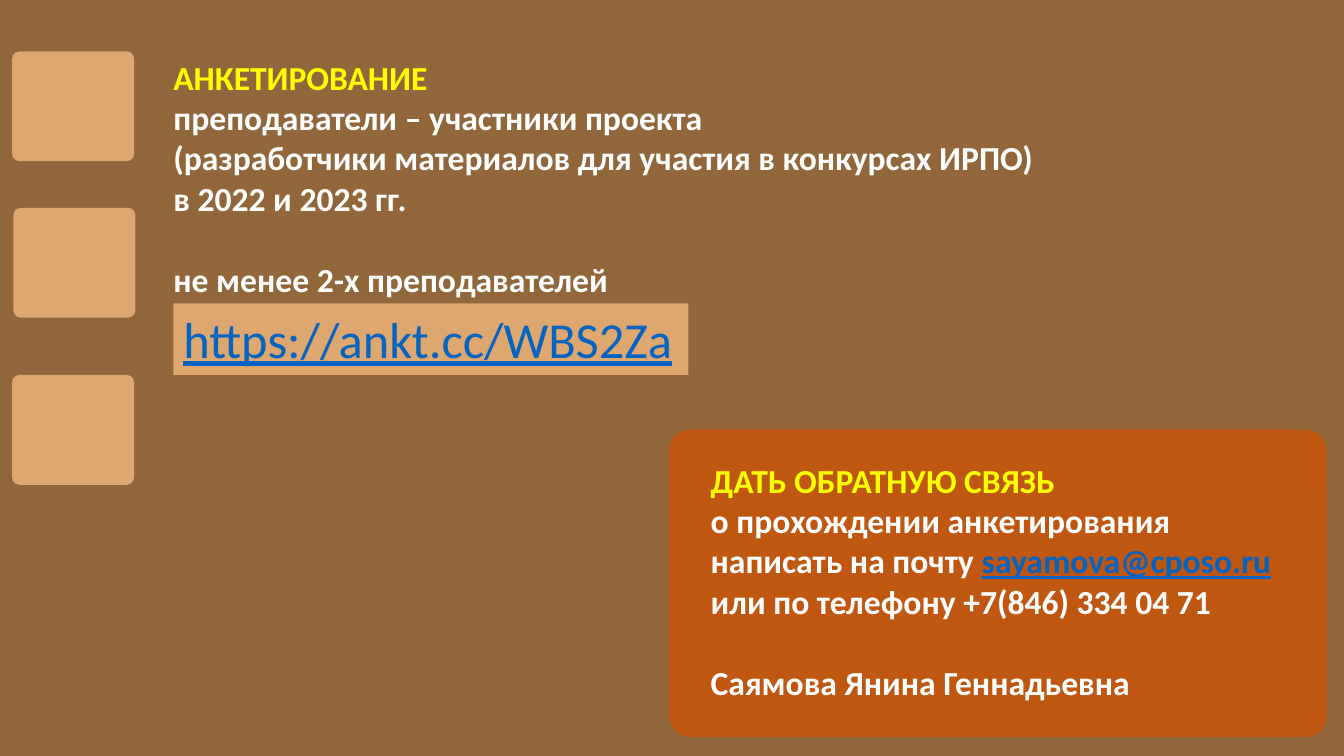
"""Builds a survey slide with a link and a feedback card."""
from pptx import Presentation, util as u
from pptx.dml.color import RGBColor
from pptx.enum import shapes, text

HUES = {"back": "91663B", "sand": "DEA770", "rust": "BF5711",
        "head": "FFFF00", "body": "FFFFFF", "link": "0563C1"}
KIND = shapes.MSO_SHAPE

deck = Presentation()
deck.slide_width, deck.slide_height = u.Inches(13.33), u.Inches(7.5)
slide = deck.slides.add_slide(deck.slide_layouts[5])
slide.background.fill.solid()
slide.background.fill.fore_color.rgb = RGBColor.from_string(HUES["back"])


def block(kind, hue, *area):
    """Adds a plain filled shape; area is in percent of the slide."""
    sides = (deck.slide_width, deck.slide_height) * 2
    shape = slide.shapes.add_shape(
        kind, *(round(side * part / 100) for side, part in zip(sides, area)))
    shape.shadow.inherit = False
    shape.fill.solid()
    shape.fill.fore_color.rgb = RGBColor.from_string(HUES[hue])
    shape.line.fill.background()
    if kind == KIND.ROUNDED_RECTANGLE:
        shape.adjustments[0] = 0.067
    return shape


def write(shape, lines, size):
    """Fills a shape with lines of (text, hue) runs; a gap precedes the last of many."""
    frame = shape.text_frame
    form = {"word_wrap": False, "auto_size": text.MSO_AUTO_SIZE.NONE,
            "vertical_anchor": text.MSO_ANCHOR.TOP}
    for key, value in form.items():
        setattr(frame, key, value)
    for row, runs in enumerate(lines):
        para = frame.add_paragraph() if row else frame.paragraphs[0]
        para.alignment = text.PP_ALIGN.LEFT
        if row and row == len(lines) - 1:
            para.space_before = u.Pt(29.3)
        for words, hue in runs:
            run = para.add_run()
            run.text = words
            look = {"name": "Calibri", "size": u.Pt(size),
                    "bold": len(lines) > 1, "underline": hue == "link"}
            for key, value in look.items():
                setattr(run.font, key, value)
            run.font.color.rgb = RGBColor.from_string(HUES[hue])


for left, top in ((0.9, 6.8), (1, 27.5), (0.9, 49.6)):
    block(KIND.ROUNDED_RECTANGLE, "sand", left, top, 9.08, 14.53)
block(KIND.ROUNDED_RECTANGLE, "rust", 49.8, 56.8, 48.9, 40.7)

title = slide.shapes.title
note = slide.shapes.add_textbox(0, 0, 0, 0)
spots = ((title, 12.15, 6.8, 66.17), (note, 52.14, 60.13, 44.19))
for box, left, top, width in spots:
    box.left = round(deck.slide_width * left / 100)
    box.top = round(deck.slide_height * top / 100)
    box.width = round(deck.slide_width * width / 100)
    box.height = round(deck.slide_height * 0.336)

write(title, [
    [("АНКЕТИРОВАНИЕ", "head")],
    [("преподаватели – участники проекта", "body")],
    [("(разработчики материалов для участия в конкурсах ИРПО)", "body")],
    [("в 2022 и 2023 гг.", "body")],
    [("не менее 2-х преподавателей", "body")]], 24)
write(note, [
    [("ДАТЬ ОБРАТНУЮ СВЯЗЬ", "head")],
    [("о прохождении анкетирования", "body")],
    [("написать на почту ", "body"), ("sayamova@cposo.ru", "link")],
    [("или по телефону +7(846) 334 04 71", "body")],
    [("Саямова Янина Геннадьевна", "body")]], 24)

link = block(KIND.RECTANGLE, "sand", 12.9, 40.13, 38.33, 9.47)
write(link, [[("https://ankt.cc/WBS2Za", "link")]], 36)

deck.save("out.pptx")
